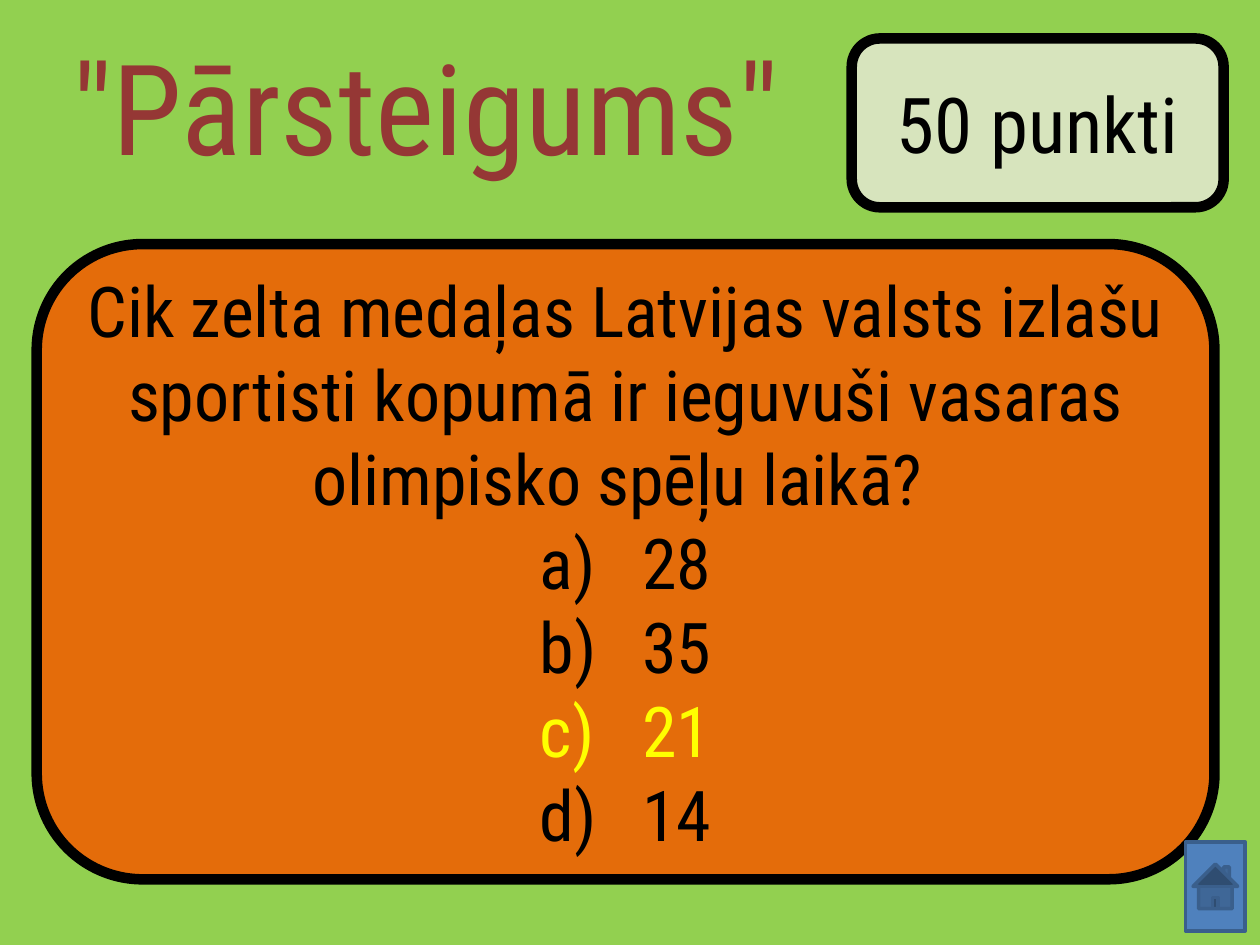
from lxml import etree
from pptx import Presentation
from pptx.dml.color import RGBColor
from pptx.enum.shapes import MSO_SHAPE
from pptx.enum.text import MSO_ANCHOR, MSO_AUTO_SIZE, PP_ALIGN
from pptx.oxml.ns import qn
from pptx.util import Pt

ROUNDED = MSO_SHAPE.ROUNDED_RECTANGLE
HOME_BUTTON = MSO_SHAPE.ACTION_BUTTON_HOME
CENTER = PP_ALIGN.CENTER
TOP, MIDDLE = MSO_ANCHOR.TOP, MSO_ANCHOR.MIDDLE

FONT = "Roboto Condensed"
COLORS = {
    "background": "92D050",
    "title": "953735",
    "points": "D7E4BD",
    "question": "E46C0A",
    "black": "000000",
    "correct": "FFFF00",
    "button": "4F81BD",
    "button line": "3A5F8C",
}
ANSWERS = ["28", "35", "21", "14"]
CORRECT = "21"
ANSWER_INDENT = Pt(58.5)


def add_box(kind, left, top, width, height, fill, line, line_width):
    box = slide.shapes.add_shape(kind, Pt(left), Pt(top), Pt(width), Pt(height))
    box.shadow.inherit = False
    box.fill.solid()
    box.fill.fore_color.rgb = RGBColor.from_string(COLORS[fill])
    box.line.color.rgb = RGBColor.from_string(COLORS[line])
    box.line.width = Pt(line_width)
    box.text_frame.vertical_anchor = MIDDLE
    return box


def write(paragraph, text, size, color):
    paragraph.text = text
    paragraph.alignment = CENTER
    paragraph.font.name = FONT
    paragraph.font.size = Pt(size)
    paragraph.font.color.rgb = RGBColor.from_string(COLORS[color])


prs = Presentation()
prs.slide_width, prs.slide_height = Pt(720), Pt(540)
slide = prs.slides.add_slide(prs.slide_layouts[5])
slide.background.fill.solid()
slide.background.fill.fore_color.rgb = RGBColor.from_string(COLORS["background"])

# Category and points
category = slide.shapes.title
category.left, category.top = Pt(0), Pt(13)
category.width, category.height = Pt(486.7), Pt(94.5)
category.text_frame.auto_size = MSO_AUTO_SIZE.NONE
category.text_frame.vertical_anchor = TOP
write(category.text_frame.paragraphs[0], '"Pārsteigums"', 72, "title")

points = add_box(ROUNDED, 486.7, 22, 212.5, 96.5, "points", "black", 6)
write(points.text_frame.paragraphs[0], "50 punkti", 44, "black")

# Question with lettered answers
question = add_box(ROUNDED, 21, 139.5, 673, 363, "question", "black", 6)
write(
    question.text_frame.paragraphs[0],
    "Cik zelta medaļas Latvijas valsts izlašu sportisti kopumā "
    "ir ieguvuši vasaras olimpisko spēļu laikā? ",
    40,
    "black",
)
for answer in ANSWERS:
    paragraph = question.text_frame.add_paragraph()
    write(paragraph, answer, 40, "correct" if answer == CORRECT else "black")
    properties = paragraph._p.get_or_add_pPr()
    properties.set("marL", str(ANSWER_INDENT))
    properties.set("indent", str(-ANSWER_INDENT))
    lettering = etree.Element(qn("a:buAutoNum"), type="alphaLcParenR")
    properties.insert(0, lettering)

add_box(HOME_BUTTON, 677.5, 481, 34, 51, "button", "button line", 2)

prs.save("out.pptx")
